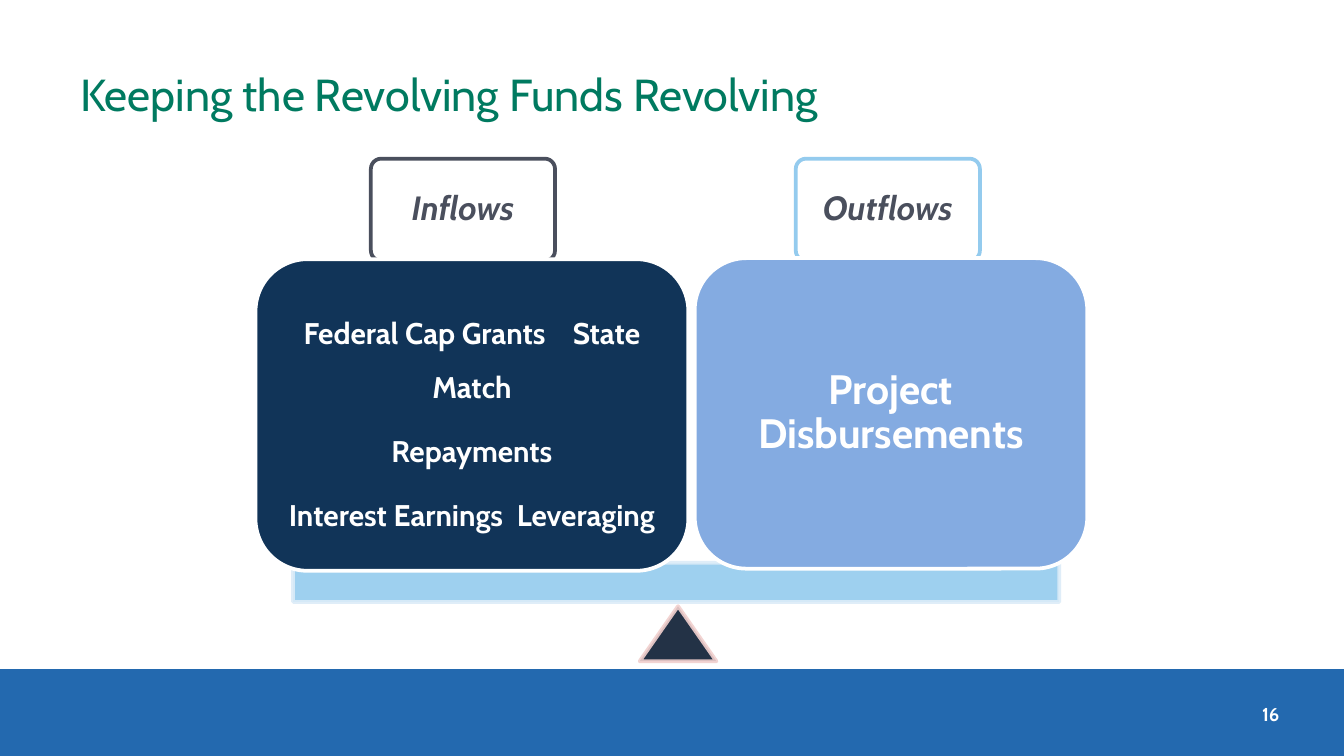
from lxml import etree
from pptx import Presentation
from pptx.dml.color import RGBColor
from pptx.enum.shapes import MSO_SHAPE
from pptx.enum.text import MSO_ANCHOR, MSO_AUTO_SIZE, PP_ALIGN
from pptx.oxml.ns import qn
from pptx.util import Cm, Pt

RECTANGLE = MSO_SHAPE.RECTANGLE
ROUNDED = MSO_SHAPE.ROUNDED_RECTANGLE
TRIANGLE = MSO_SHAPE.ISOSCELES_TRIANGLE
LEFT, CENTER, RIGHT = PP_ALIGN.LEFT, PP_ALIGN.CENTER, PP_ALIGN.RIGHT
MIDDLE = MSO_ANCHOR.MIDDLE
NO_AUTOFIT = MSO_AUTO_SIZE.NONE

FONT = "Cabin"
WHITE = "FFFFFF"
SLATE = "4A4F5D"
SKY = "94CBEE"


def color(value):
    return RGBColor.from_string(value)


def set_opacity(fill_parent, percent):
    """Make the solid fill below this element partly transparent."""
    rgb = fill_parent.find(qn("a:solidFill")).find(qn("a:srgbClr"))
    etree.SubElement(rgb, qn("a:alpha")).set("val", str(percent * 1000))


def add_block(slide, kind, box, fill, line=None, opacity=None):
    shape = slide.shapes.add_shape(kind, *[Cm(length) for length in box])
    shape.shadow.inherit = False
    shape.fill.solid()
    shape.fill.fore_color.rgb = color(fill)
    if line is None:
        shape.line.fill.background()
    else:
        shape.line.color.rgb = color(line)
        shape.line.width = Pt(2)
    if opacity is not None:
        properties = shape.fill._xPr
        set_opacity(properties, opacity)
        set_opacity(properties.find(qn("a:ln")), opacity)
    return shape


def prepare_frame(shape, inset=None):
    frame = shape.text_frame
    frame.word_wrap = True
    frame.auto_size = NO_AUTOFIT
    frame.vertical_anchor = MIDDLE
    if inset is not None:
        frame.margin_left = frame.margin_right = Cm(inset)
        frame.margin_top = frame.margin_bottom = Cm(inset)
    return frame


def add_run(paragraph, text, size, text_color, bold=False, italic=False):
    run = paragraph.add_run()
    run.text = text
    font = run.font
    font.name, font.size, font.bold, font.italic = FONT, Pt(size), bold, italic
    font.color.rgb = color(text_color)
    return run


def add_gap(paragraph, size, extra):
    """Add one space widened by extra points."""
    run = add_run(paragraph, " ", size, WHITE, bold=True)
    run.font._element.set("spc", str(round(extra * 100)))


def write_lines(shape, lines, size, text_color=WHITE, inset=0.18,
                spacing=0.9, italic=False, gaps=()):
    """Write centred paragraphs; each line is a list of phrases."""
    frame = prepare_frame(shape, inset)
    gaps = iter(gaps)
    for index, phrases in enumerate(lines):
        paragraph = frame.add_paragraph() if index else frame.paragraphs[0]
        paragraph.alignment = CENTER
        paragraph.line_spacing = spacing
        paragraph.space_after = Pt(round(size * 0.35, 1))
        for position, phrase in enumerate(phrases):
            if position:
                add_gap(paragraph, size, next(gaps))
            add_run(paragraph, phrase, size, text_color, True, italic)


def add_title(slide, text):
    title = slide.shapes.title
    title.left, title.top = Cm(1.27), Cm(0.58)
    title.width, title.height = Cm(18.85), Cm(2.39)
    paragraph = prepare_frame(title).paragraphs[0]
    paragraph.alignment = LEFT
    add_run(paragraph, text, 24, "007A60")


def add_page_number(slide, number):
    box = slide.shapes.add_textbox(Cm(22.73), Cm(13.11), Cm(1.7), Cm(0.76))
    paragraph = prepare_frame(box).paragraphs[0]
    paragraph.alignment = RIGHT
    add_run(paragraph, number, 10, WHITE, bold=True)


def add_label(slide, left, text, line):
    label = add_block(slide, ROUNDED, (left, 3, 3.48, 1.93), WHITE, line)
    label.adjustments[0] = 0.1
    write_lines(label, [[text]], 18, SLATE, italic=True)


def main():
    presentation = Presentation()
    presentation.slide_width, presentation.slide_height = Cm(25.4), Cm(14.29)
    slide = presentation.slides.add_slide(presentation.slide_layouts[5])

    # Footer band and title
    add_block(slide, RECTANGLE, (0, 12.65, 25.4, 1.64), "2369AF")
    add_title(slide, "Keeping the Revolving Funds Revolving")

    # Labels above the two sides
    add_label(slide, 7.01, "Inflows", SLATE)
    add_label(slide, 15.04, "Outflows", SKY)

    # Balance: pivot and beam
    add_block(slide, TRIANGLE, (12.09, 11.46, 1.45, 1.04), "0C1C32", "F1D0CE", 90)
    add_block(slide, RECTANGLE, (5.54, 10.64, 14.48, 0.74), SKY, "DCECF8", 90)

    # Weights on the beam
    inflows = add_block(slide, ROUNDED, (4.83, 4.9, 8.18, 5.89), "113458", WHITE)
    write_lines(inflows, [["Federal Cap Grants", "State Match"],
                          ["Repayments"],
                          ["Interest Earnings", "Leveraging"]],
                16, spacing=1.5, gaps=(11, 3.7))
    outflows = add_block(slide, ROUNDED, (13.13, 4.88, 7.42, 5.87), "84ABE1", WHITE)
    write_lines(outflows, [["Project Disbursements"]], 22, inset=0.23)

    add_page_number(slide, "16")
    presentation.save("out.pptx")


if __name__ == "__main__":
    main()
